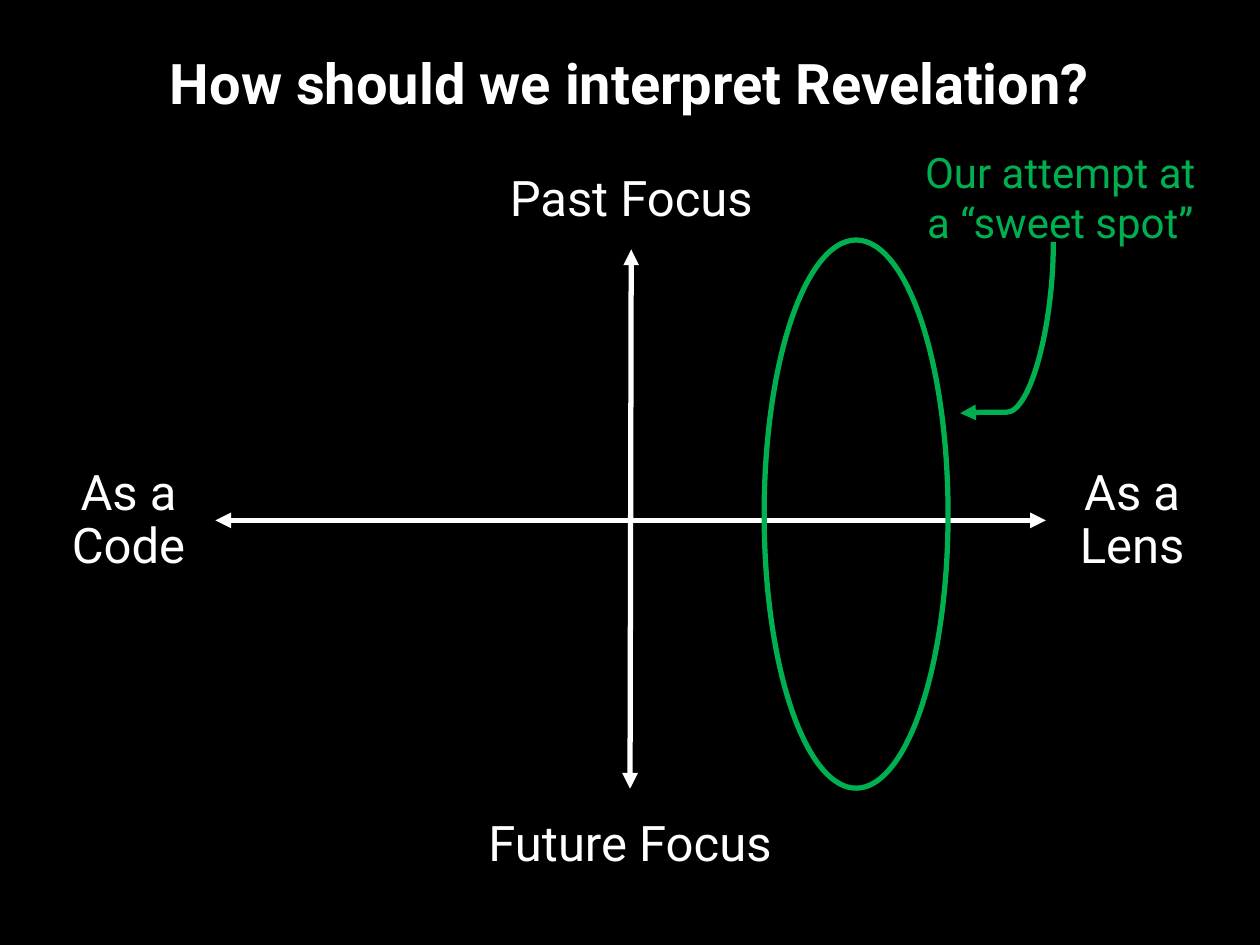
from dataclasses import dataclass
from typing import Optional

from lxml import etree
from pptx import Presentation
from pptx import util as u
from pptx.dml.color import RGBColor
from pptx.enum import shapes, text
from pptx.oxml.ns import qn


@dataclass(frozen=True)
class Theme:
    back: RGBColor = RGBColor(0x00, 0x00, 0x00)
    ink: RGBColor = RGBColor(0xFF, 0xFF, 0xFF)
    accent: RGBColor = RGBColor(0x00, 0xB0, 0x50)
    font: str = "Roboto"
    title: int = 32
    label: int = 28
    note: int = 24
    stroke: int = 3


@dataclass(frozen=True)
class Box:
    """Left, top, width and height in grid columns and rows."""
    col: float
    row: float
    cols: float
    rows: float


@dataclass(frozen=True)
class Label:
    words: str
    box: Box
    size: int
    color: RGBColor
    spacing: float = 1.0
    bold: bool = False
    before: int = 10
    after: int = 6


@dataclass(frozen=True)
class Arrow:
    start: tuple[float, float]
    end: tuple[float, float]
    color: RGBColor
    both: bool = True
    kind: shapes.MSO_CONNECTOR = shapes.MSO_CONNECTOR.STRAIGHT
    turn: int = 0
    bend: Optional[int] = None


THEME = Theme()
COLS, ROWS = 100, 75
WIDTH, HEIGHT = u.Inches(10), u.Inches(7.5)


def x(col: float) -> int:
    return round(WIDTH * col / COLS)


def y(row: float) -> int:
    return round(HEIGHT * row / ROWS)


def apply(target, values: dict) -> None:
    for name, value in values.items():
        setattr(target, name, value)


def place(sp, box: Box) -> None:
    apply(sp, {"left": x(box.col), "top": y(box.row),
               "width": x(box.cols), "height": y(box.rows)})


def write(sp, label: Label) -> None:
    place(sp, label.box)
    tf = sp.text_frame
    apply(tf, {"word_wrap": True, "auto_size": text.MSO_AUTO_SIZE.NONE,
               "vertical_anchor": text.MSO_ANCHOR.MIDDLE})
    p = tf.paragraphs[0]
    apply(p, {"alignment": text.PP_ALIGN.CENTER, "line_spacing": label.spacing,
              "space_before": u.Pt(label.before), "space_after": u.Pt(label.after)})
    # No bullet and no hanging indent
    pPr = p._p.get_or_add_pPr()
    pPr.set("marL", "0")
    pPr.set("indent", "0")
    etree.SubElement(pPr, qn("a:buNone"))
    r = p.add_run()
    r.text = label.words
    apply(r.font, {"name": THEME.font, "size": u.Pt(label.size), "bold": label.bold})
    r.font.color.rgb = label.color


def stroke(sp, color: RGBColor) -> None:
    sp.line.color.rgb = color
    sp.line.width = u.Pt(THEME.stroke)


def draw_arrow(slide, arrow: Arrow) -> None:
    (x1, y1), (x2, y2) = arrow.start, arrow.end
    sp = slide.shapes.add_connector(arrow.kind, x(x1), y(y1), x(x2), y(y2))
    stroke(sp, arrow.color)
    ln = sp.line._get_or_add_ln()
    for end in ("a:headEnd", "a:tailEnd") if arrow.both else ("a:tailEnd",):
        etree.SubElement(ln, qn(end), type="triangle")
    spPr = sp._element.spPr
    etree.SubElement(spPr, qn("a:effectLst"))
    if arrow.turn:
        spPr.find(qn("a:xfrm")).set("rot", str(arrow.turn * 60000))
    if arrow.bend is not None:
        geom = spPr.find(qn("a:prstGeom"))
        guides = geom.find(qn("a:avLst"))
        if guides is None:
            guides = etree.SubElement(geom, qn("a:avLst"))
        etree.SubElement(guides, qn("a:gd"), name="adj1", fmla=f"val {arrow.bend}")


def draw_ring(slide, box: Box, turn: int) -> None:
    sp = slide.shapes.add_shape(shapes.MSO_SHAPE.OVAL, 0, 0, 0, 0)
    place(sp, box)
    sp.rotation = turn
    sp.shadow.inherit = False
    sp.fill.background()
    stroke(sp, THEME.accent)


TITLE = Label("How should we interpret Revelation?", Box(6.9, 2.4, 86.2, 8.9),
              THEME.title, THEME.ink, 0.9, True, 0, 0)
CODE = Label("As a Code", Box(3.3, 36.2, 13.8, 10.3), THEME.label, THEME.ink, 0.9)
LABELS = [
    Label("As a Lens", Box(83, 36.2, 13.7, 10.3), THEME.label, THEME.ink, 0.9),
    Label("Future Focus", Box(35.3, 62.6, 29.4, 8.4), THEME.label, THEME.ink),
    Label("Past Focus", Box(35.4, 11.4, 29.4, 8.4), THEME.label, THEME.ink),
]
NOTE = Label("Our attempt at a “sweet spot”", Box(71.7, 9.4, 24.9, 12.4),
             THEME.note, THEME.accent)
AXES = [
    Arrow((83, 41.3), (17.1, 41.3), THEME.ink),
    Arrow((50.1, 19.8), (50, 62.6), THEME.ink),
]
# Given before its quarter turn, which makes it run down and then left
POINTER = Arrow((73.1, 22.3), (86.7, 29.7), THEME.accent, both=False,
                kind=shapes.MSO_CONNECTOR.CURVE, turn=90, bend=99400)
SWEET_SPOT = Box(46.2, 33.5, 43.5, 14.6)


def main() -> None:
    prs = Presentation()
    apply(prs, {"slide_width": WIDTH, "slide_height": HEIGHT})
    slide = prs.slides.add_slide(prs.slide_layouts[1])
    fill = slide.background.fill
    fill.solid()
    fill.fore_color.rgb = THEME.back

    # Title and the left end of the axis
    write(slide.shapes.title, TITLE)
    write(slide.placeholders[1], CODE)

    # Axes and their other ends
    for axis in AXES:
        draw_arrow(slide, axis)
    for label in LABELS:
        write(slide.shapes.add_textbox(0, 0, 0, 0), label)

    # Sweet spot with its note
    draw_ring(slide, SWEET_SPOT, 270)
    write(slide.shapes.add_textbox(0, 0, 0, 0), NOTE)
    draw_arrow(slide, POINTER)

    prs.save("out.pptx")


if __name__ == "__main__":
    main()
